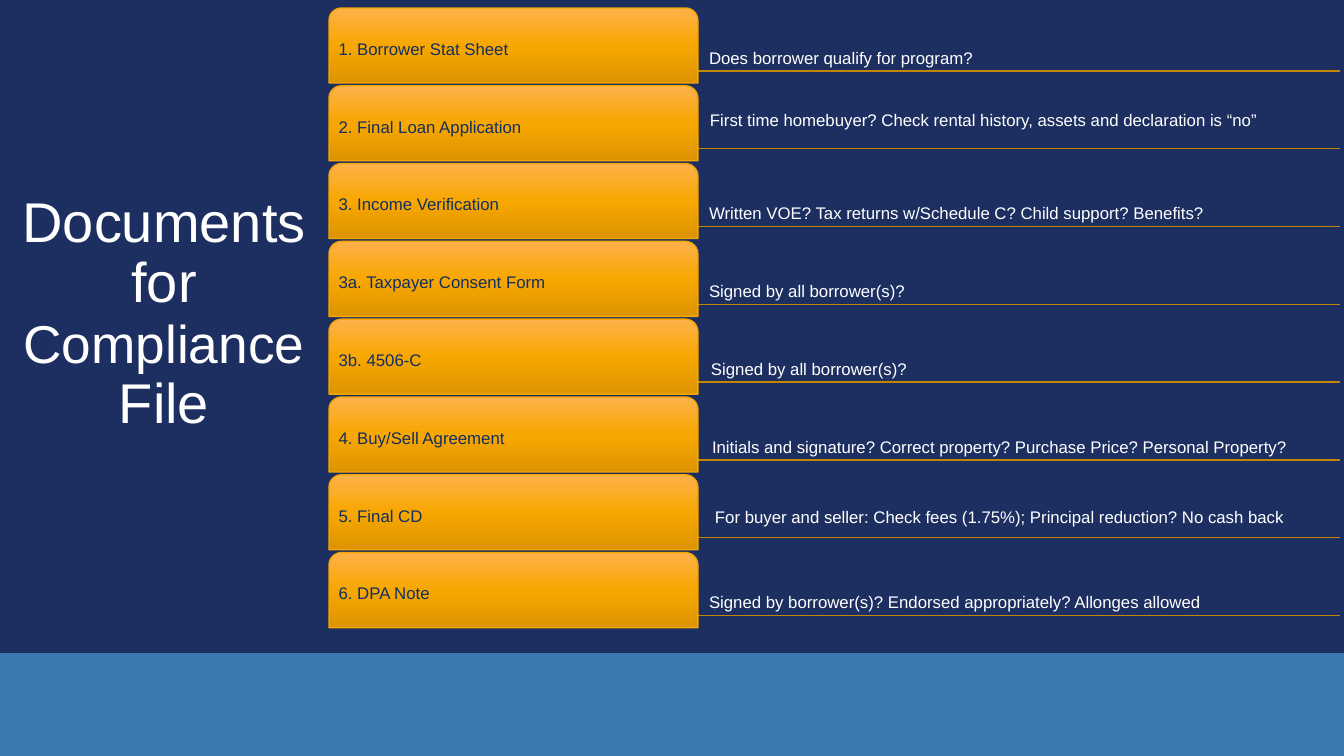
from copy import deepcopy
from pptx import Presentation
from pptx.dml.color import RGBColor as Rgb
from pptx.enum.shapes import MSO_SHAPE as Shape, MSO_CONNECTOR as Conn
from pptx.enum.text import PP_ALIGN as Align, MSO_ANCHOR as Anchor
from pptx.oxml.ns import qn
from pptx.oxml.xmlchemy import OxmlElement as Element
from pptx.util import Pt

# Content: title parts with size; rows of label, question, text left, lift above rule
TITLE = [("Documents for ", 40), ("Compliance", 38), (" File", 40)]
ROWS = [
    ("1. Borrower Stat Sheet", "Does borrower qualify for program?", 709, 0),
    ("2. Final Loan Application",
     "First time homebuyer? Check rental history, assets and declaration is “no”", 710, 16),
    ("3. Income Verification",
     "Written VOE? Tax returns w/Schedule C? Child support? Benefits?", 709, 0),
    ("3a. Taxpayer Consent Form", "Signed by all borrower(s)?", 709, 0),
    ("3b. 4506-C", "Signed by all borrower(s)?", 711, 0),
    ("4. Buy/Sell Agreement",
     "Initials and signature? Correct property? Purchase Price? Personal Property?", 712, 0),
    ("5. Final CD",
     "For buyer and seller: Check fees (1.75%); Principal reduction? No cash back", 715, 8),
    ("6. DPA Note",
     "Signed by borrower(s)? Endorsed appropriately? Allonges allowed", 709, 0),
]
HEX = {"navy": "1C2F60", "band": "3A7AB2", "white": "FFFFFF", "ink": "112F60",
       "rule": "C48502", "edge": "F5A603"}
FADE = [(0, "FDB14B"), (0.5, "F8A700"), (1, "DC9400")]

# Layout in px
WIDE, HIGH = 1344, 756
UNIT = 12192000 / WIDE
STEP = 77.8
TAB_X, TAB_Y, TAB_W, TAB_H = 329, 8, 369, 75
RULE_Y, RULE_X, RULE_END = 71, 390, 1340
NOTE_W, NOTE_H, PAD = 590, 50, 3


def px(n):
    return round(n * UNIT)


def box(*sides):
    return [px(n) for n in sides]


def tint(name):
    return Rgb.from_string(HEX[name])


def style(run, size, name):
    run.font.name = "Arial"
    run.font.size = Pt(size)
    run.font.color.rgb = tint(name)


def write(shape, text, name, anchor, left=PAD, top=PAD):
    frame = shape.text_frame
    frame.text = text
    frame.word_wrap = True
    frame.vertical_anchor = anchor
    frame.margin_left, frame.margin_top = box(left, top)
    frame.margin_right = frame.margin_bottom = px(PAD)
    para = frame.paragraphs[0]
    para.alignment = Align.LEFT
    para.line_spacing = 0.9
    style(para.runs[0], 12, name)


def shade(shape):
    fill = shape.fill
    fill.gradient()
    fill.gradient_angle = 270
    stops = shape._element.spPr.find(qn("a:gradFill")).find(qn("a:gsLst"))
    stops.append(deepcopy(stops[-1]))
    for stop, (place, code) in zip(fill.gradient_stops, FADE):
        stop.position = place
        stop.color.rgb = Rgb.from_string(code)


deck = Presentation()
deck.slide_width, deck.slide_height = box(WIDE, HIGH)
slide = deck.slides.add_slide(deck.slide_layouts[6])
slide.background.fill.solid()
slide.background.fill.fore_color.rgb = tint("navy")
shapes = slide.shapes

# Bottom band
band = shapes.add_shape(Shape.RECTANGLE, *box(0, 653, WIDE, HIGH - 653))
band.shadow.inherit = False
band.fill.solid()
band.fill.fore_color.rgb = tint("band")
band.line.fill.background()

# Title
frame = shapes.add_textbox(*box(11, 193, 306, 248)).text_frame
frame.word_wrap = True
frame.vertical_anchor = Anchor.BOTTOM
para = frame.paragraphs[0]
para.alignment = Align.CENTER
para.line_spacing = 0.9
for text, size in TITLE:
    run = para.add_run()
    run.text = text
    style(run, size, "white")

# Rules, behind the tabs
for i in range(len(ROWS)):
    y = RULE_Y + STEP * i
    rule = shapes.add_connector(Conn.STRAIGHT, *box(RULE_X, y, RULE_END, y))
    rule.line.color.rgb = tint("rule")
    rule.line.width = Pt(1)
    rule._element.spPr.append(Element("a:effectLst"))

# Tabs and questions
for i, (label, ask, left, lift) in enumerate(ROWS):
    drop = STEP * i
    tab = shapes.add_shape(Shape.ROUND_2_SAME_RECTANGLE,
                           *box(TAB_X, TAB_Y + drop, TAB_W, TAB_H))
    tab.shadow.inherit = False
    shade(tab)
    tab.line.color.rgb = tint("edge")
    tab.line.width = Pt(1)
    write(tab, label, "ink", Anchor.MIDDLE, left=6, top=8)
    base = RULE_Y + drop - lift
    note = shapes.add_textbox(*box(left - PAD, base - NOTE_H, NOTE_W, NOTE_H))
    write(note, ask, "white", Anchor.BOTTOM)

deck.save("out.pptx")
